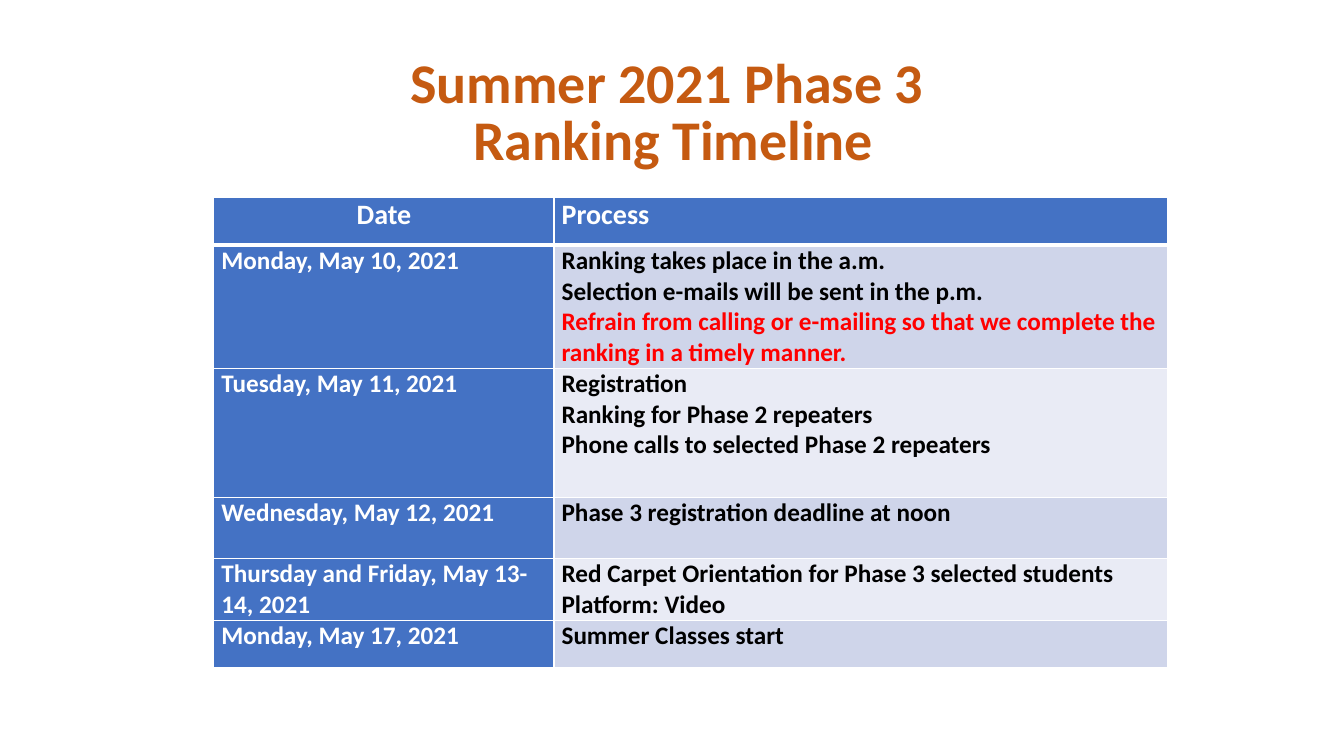
"""Build the Summer 2021 Phase 3 ranking timeline slide."""
from lxml import etree
from pptx import Presentation
from pptx import util as u
from pptx.dml.color import RGBColor
from pptx.enum import text
from pptx.oxml.ns import qn

BLUE, WHITE, BLACK, RED, ORANGE = "4472C4", "FFFFFF", "000000", "FF0000", "C55A11"
BANDS = ["CFD5EA", "E9EBF5"]
COLUMN_WIDTHS = [243, 438]
ROW_HEIGHTS = [34, 88, 92, 44, 44, 34]
TIMELINE = [
    ("Monday, May 10, 2021", [
        ("Ranking takes place in the a.m.", BLACK),
        ("Selection e-mails will be sent in the p.m.", BLACK),
        ("Refrain from calling or e-mailing so that we complete the "
         "ranking in a timely manner.", RED)]),
    ("Tuesday, May 11, 2021", [
        ("Registration", BLACK),
        ("Ranking for Phase 2 repeaters", BLACK),
        ("Phone calls to selected Phase 2 repeaters", BLACK)]),
    ("Wednesday, May 12, 2021", [("Phase 3 registration deadline at noon", BLACK)]),
    ("Thursday and Friday, May 13-14, 2021", [
        ("Red Carpet Orientation for Phase 3 selected students", BLACK),
        ("Platform: Video", BLACK)]),
    ("Monday, May 17, 2021", [("Summer Classes start", BLACK)]),
]


def rgb(value):
    """Turn a hex string into a colour."""
    return RGBColor.from_string(value)


def add_span(para, words, size, color):
    """Add one bold run to a paragraph."""
    span = para.add_run()
    span.text = words
    span.font.name = "Calibri"
    span.font.size = u.Pt(size)
    span.font.bold = True
    span.font.color.rgb = rgb(color)


def add_title(page, left, top, width, height):
    """Place the two-line centred title in its box."""
    box = page.shapes.add_textbox(*map(u.Pt, (left, top, width, height)))
    frame = box.text_frame
    frame.word_wrap = True
    frame.vertical_anchor = text.MSO_ANCHOR.MIDDLE
    para = frame.paragraphs[0]
    para.alignment = text.PP_ALIGN.CENTER
    para.line_spacing = 0.85
    add_span(para, "Summer 2021 Phase 3 ", 40, ORANGE)
    para.add_line_break()
    add_span(para, "Ranking Timeline", 40, ORANGE)


def set_borders(cell, top, bottom):
    """Draw white borders with the given top and bottom widths."""
    properties = cell._tc.get_or_add_tcPr()
    for side, width in (("L", 1), ("R", 1), ("T", top), ("B", bottom)):
        line = etree.SubElement(properties, qn(f"a:ln{side}"), w=str(u.Pt(width)))
        fill = etree.SubElement(line, qn("a:solidFill"))
        etree.SubElement(fill, qn("a:srgbClr"), val=WHITE)


def fill_cell(cell, lines, size, fill, top=1, bottom=1):
    """Write coloured lines into a cell and style it."""
    set_borders(cell, top, bottom)
    cell.fill.solid()
    cell.fill.fore_color.rgb = rgb(fill)
    cell.margin_left = cell.margin_right = u.Pt(5.4)
    cell.margin_top = cell.margin_bottom = 0
    frame = cell.text_frame
    for index, (words, color) in enumerate(lines):
        para = frame.add_paragraph() if index else frame.paragraphs[0]
        add_span(para, words, size, color)


def add_timeline(page, left, top):
    """Place the table of dates and processes at a corner."""
    width, height = sum(COLUMN_WIDTHS), sum(ROW_HEIGHTS)
    table = page.shapes.add_table(
        len(ROW_HEIGHTS), len(COLUMN_WIDTHS), *map(u.Pt, (left, top, width, height))).table
    for column, size in zip(table.columns, COLUMN_WIDTHS):
        column.width = u.Pt(size)
    for row, size in zip(table.rows, ROW_HEIGHTS):
        row.height = u.Pt(size)
    for column, heading in enumerate(("Date", "Process")):
        fill_cell(table.cell(0, column), [(heading, WHITE)], 20, BLUE, bottom=3)
    table.cell(0, 0).text_frame.paragraphs[0].alignment = text.PP_ALIGN.CENTER
    for row, (date, process) in enumerate(TIMELINE, 1):
        edge = 3 if row == 1 else 1
        fill_cell(table.cell(row, 0), [(date, WHITE)], 18, BLUE, top=edge)
        fill_cell(table.cell(row, 1), process, 18, BANDS[(row - 1) % 2], top=edge)


def main():
    """Build and save the deck."""
    deck = Presentation()
    deck.slide_width, deck.slide_height = u.Pt(960), u.Pt(540)
    page = deck.slides.add_slide(deck.slide_layouts[6])
    add_title(page, 175, 22.5, 612, 119)
    add_timeline(page, 152.8, 141.2)
    deck.save("out.pptx")


if __name__ == "__main__":
    main()
